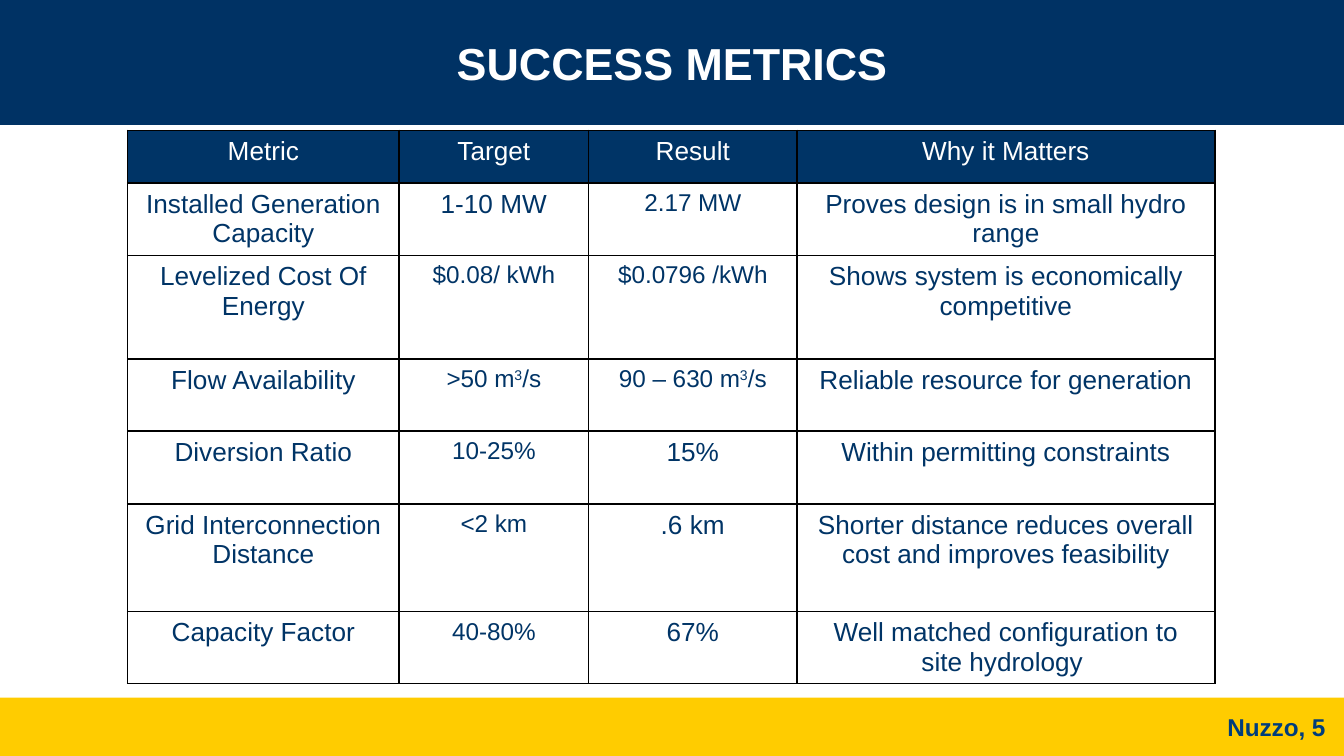
from lxml import etree
from pptx import Presentation
from pptx.dml.color import RGBColor as Color
from pptx.enum.shapes import MSO_SHAPE as Shape
from pptx.enum.text import MSO_ANCHOR as Anchor, MSO_AUTO_SIZE as AutoSize, PP_ALIGN as Align
from pptx.oxml.ns import qn
from pptx.util import Inches, Pt

COLORS = {"navy": "003264", "yellow": "FFCC00", "ink": "003466",
          "footer": "003D7C", "white": "FFFFFF", "border": "000000"}


def write(para, text, size, color, bold=False, align=Align.CENTER):
    """Fill a paragraph; parts between carets are raised."""
    para.alignment = align
    for index, part in enumerate(text.split("^")):
        span = para.add_run()
        span.text = part
        for name, value in {"name": "Arial", "size": Pt(size), "bold": bold}.items():
            setattr(span.font, name, value)
        span.font.color.rgb = Color.from_string(COLORS[color])
        if index % 2:
            span.font._element.set("baseline", "30000")


def add_borders(cell):
    props = cell._tc.get_or_add_tcPr()
    for position, side in enumerate(("lnL", "lnR", "lnT", "lnB")):
        line = etree.Element(qn(f"a:{side}"), w=str(Pt(1)))
        fill = etree.SubElement(line, qn("a:solidFill"))
        etree.SubElement(fill, qn("a:srgbClr"), val=COLORS["border"])
        props.insert(position, line)


deck = Presentation()
deck.slide_width = width = Inches(10)
deck.slide_height = height = width * 9 // 16
page = deck.slides.add_slide(deck.slide_layouts[5])

# Header and footer bands
header_height = Inches(0.93)
footer_top = Inches(5.19)
for top, band_height, color in ((0, header_height, "navy"),
                                (footer_top, height - footer_top, "yellow")):
    band = page.shapes.add_shape(Shape.RECTANGLE, 0, top, width, band_height)
    band.shadow.inherit = False
    band.fill.solid()
    band.fill.fore_color.rgb = Color.from_string(COLORS[color])
    band.line.fill.background()

# Title, raised above the header band
title = page.shapes.title
page.shapes._spTree.append(title._element)
margin = Inches(0.42)
title.left, title.top = margin, 0
title.width, title.height = width - 2 * margin, header_height

# Page label
label_width = Inches(1.82)
label = page.shapes.add_textbox(width - label_width - Inches(0.04), footer_top,
                                label_width, height - footer_top)

for box in (title, label):
    for name, value in {"word_wrap": True, "auto_size": AutoSize.NONE,
                        "vertical_anchor": Anchor.MIDDLE}.items():
        setattr(box.text_frame, name, value)
write(title.text_frame.paragraphs[0], "SUCCESS METRICS", 24, "white", bold=True)
write(label.text_frame.paragraphs[0], "Nuzzo, 5", 13, "footer", bold=True, align=Align.RIGHT)

# Metrics table
rows = [
    ("Metric", "Target", "Result", "Why it Matters"),
    ("Installed Generation Capacity", "1-10 MW", "2.17 MW",
     "Proves design is in small hydro range"),
    ("Levelized Cost Of Energy", "$0.08/ kWh", "$0.0796 /kWh",
     "Shows system is economically competitive"),
    ("Flow Availability", ">50 m^3^/s", "90 – 630 m^3^/s", "Reliable resource for generation"),
    ("Diversion Ratio", "10-25%", "15%", "Within permitting constraints"),
    ("Grid Interconnection Distance", "<2 km", ".6 km",
     "Shorter distance reduces overall cost and improves feasibility"),
    ("Capacity Factor", "40-80%", "67%", "Well matched configuration to site hydrology "),
]
column_widths = [2.02, 1.41, 1.55, 3.11]
row_heights = [0.39, 0.54, 0.77, 0.54, 0.54, 0.8, 0.39]  # the last row grows with its text
small_rows = {1: range(2, 7), 2: range(1, 4)}  # column: rows set in smaller type

frame = page.shapes.add_table(len(rows), len(column_widths), Inches(0.95), Inches(0.97),
                              Inches(sum(column_widths)), Inches(sum(row_heights)))
table = frame.table
table.first_row = table.horz_banding = False
for column, inches in zip(table.columns, column_widths):
    column.width = Inches(inches)
for row, inches in zip(table.rows, row_heights):
    row.height = Inches(inches)
frame.height = Inches(4.17)

for r, texts in enumerate(rows):
    for c, text in enumerate(texts):
        cell = table.cell(r, c)
        if r == 0:
            cell.fill.solid()
            cell.fill.fore_color.rgb = Color.from_string(COLORS["ink"])
        else:
            cell.fill.background()
        add_borders(cell)
        size = 13 if r in small_rows.get(c, ()) else 14
        write(cell.text_frame.paragraphs[0], text, size, "ink" if r else "white")

deck.save("out.pptx")
